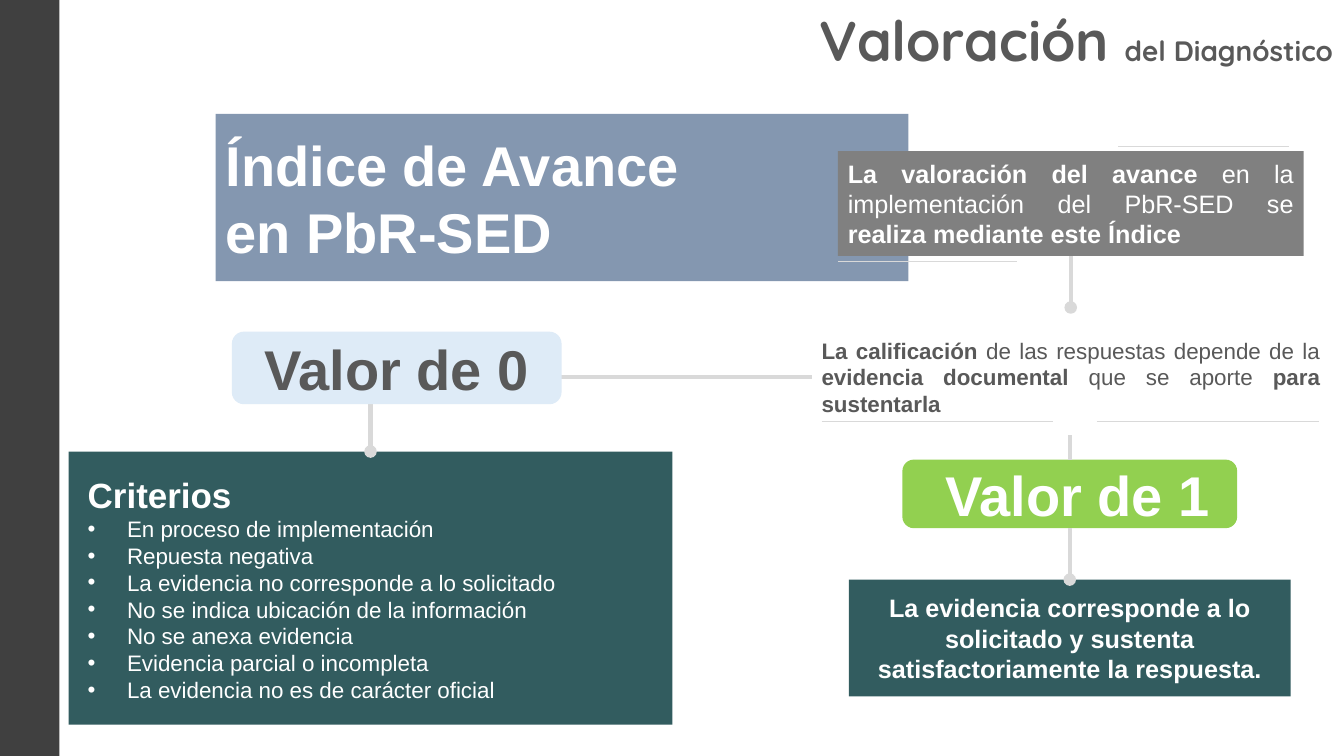
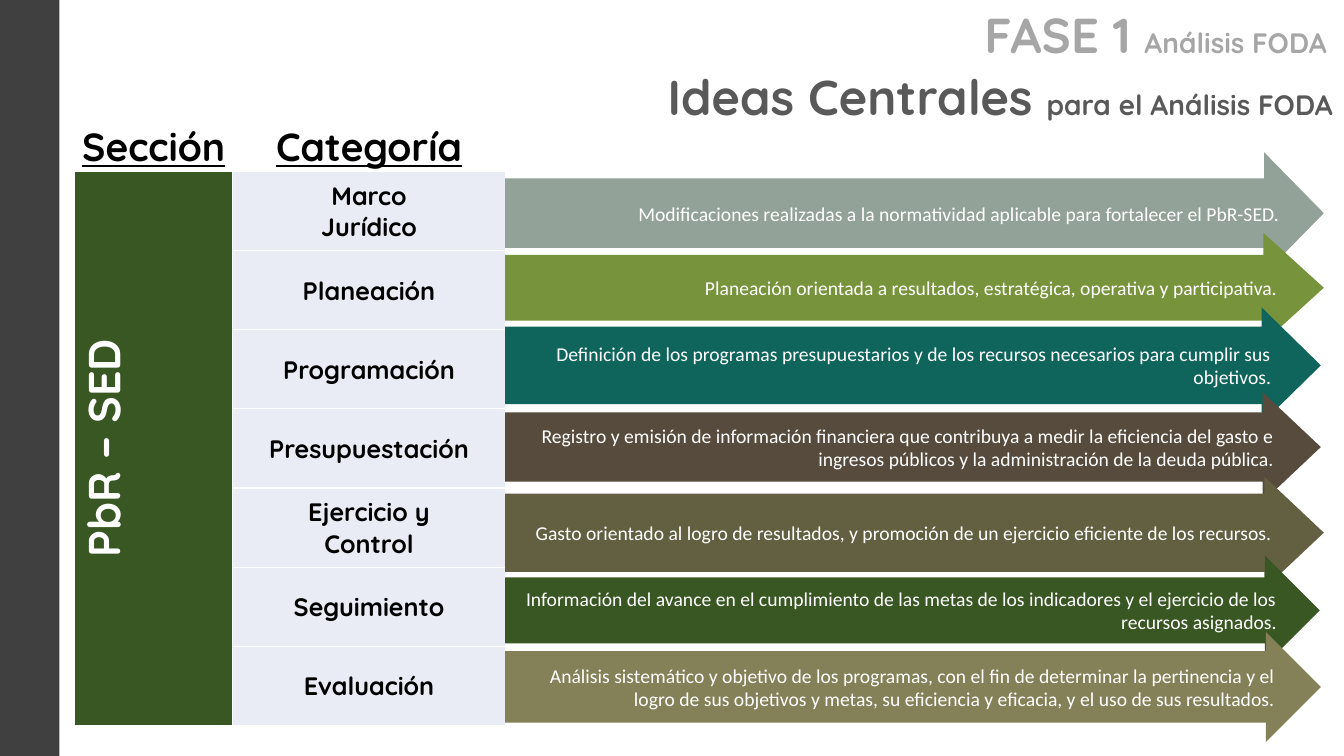
from dataclasses import dataclass

import pptx
import pptx.dml.color
import pptx.enum.dml
import pptx.enum.shapes
import pptx.enum.text
import pptx.oxml
import pptx.oxml.ns
import pptx.util

Inches = pptx.util.Inches
Pt = pptx.util.Pt
qn = pptx.oxml.ns.qn
Preset = pptx.enum.shapes.MSO_SHAPE
Wire = pptx.enum.shapes.MSO_CONNECTOR
Align = pptx.enum.text.PP_ALIGN
Anchor = pptx.enum.text.MSO_ANCHOR
TOP, LEFT, BOTTOM = 0, 1, 2


@dataclass(frozen=True)
class Theme:
    white: str = "FFFFFF"
    black: str = "000000"
    bar: str = "404040"
    ink: str = "595959"
    muted: str = "A6A6A6"
    rule: str = "D9D9D9"
    banner: str = "8497B0"
    gray: str = "808080"
    teal: str = "325C5F"
    pale_blue: str = "DEEBF7"
    lime: str = "92D050"
    section: str = "385723"
    category: str = "E9EBF5"
    title_font: str = "Quicksand"
    body_font: str = "Arial"
    arrow_font: str = "Calibri"
    huge: int = 40
    vertical: int = 32
    title: int = 35
    header: int = 28
    heading: int = 25
    subtitle: int = 20
    body: int = 18
    small: int = 16
    arrow: int = 14


THEME = Theme()

# Paragraphs are strings, or lists of (text, bold) runs.
BOXES = {
    "banner": dict(at=(2.14, 1.13, 6.87, 1.66), fill=THEME.banner, size=THEME.huge, bold=True,
                   align=Align.LEFT, text=["Índice de Avance", "en PbR-SED"]),
    "valuation": dict(at=(8.31, 1.5, 4.62, 1.04), fill=THEME.gray, align=Align.JUSTIFY, text=[[
        ("La valoración del avance ", True),
        ("en la implementación del PbR-SED se ", False),
        ("realiza mediante este Índice", True)]]),
    "grading": dict(at=(8.05, 3.05, 5.14, 1.38), fill=THEME.white, color=THEME.ink,
                    size=THEME.small, align=Align.JUSTIFY, text=[[
                        ("La calificación ", True),
                        ("de las respuestas depende de la ", False),
                        ("evidencia documental ", True),
                        ("que se aporte ", False),
                        ("para sustentarla", True)]]),
    "evidence": dict(at=(8.42, 5.75, 4.38, 1.16), fill=THEME.teal, bold=True, text=[
        "La evidencia corresponde a lo solicitado y sustenta satisfactoriamente la respuesta."]),
    "value_one": dict(at=(8.95, 4.56, 3.32, 0.68), fill=THEME.lime, size=THEME.huge, bold=True,
                      preset=Preset.ROUNDED_RECTANGLE, text=["Valor de 1"]),
}
VALUE_ZERO = dict(at=(2.3, 3.29, 3.27, 0.72), fill=THEME.pale_blue, color=THEME.ink,
                  size=THEME.huge, bold=True, preset=Preset.ROUNDED_RECTANGLE,
                  text=["Valor de 0"])
CRITERIA_AT = (0.68, 4.48, 5.99, 2.71)
CRITERIA = [
    "En proceso de implementación",
    "Repuesta negativa",
    "La evidencia no corresponde a lo solicitado",
    "No se indica ubicación de la información",
    "No se anexa evidencia",
    "Evidencia parcial o incompleta",
    "La evidencia no es de carácter oficial",
]
THIN_RULES = [(11.09, 12.78, 1.45), (8.31, 10.09, 2.59), (8.15, 10.44, 4.18), (10.88, 13.08, 4.18)]

HEADERS = ["Sección", "Categoría"]
SECTION = "PbR – SED"
TABLE_AT = (0.74, 1.07, 4.27, 6.13)
COLUMNS = (1.57, 2.7)
HEADER_HEIGHT = 0.63
CATEGORIES = [["Marco", "Jurídico"], ["Planeación"], ["Programación"], ["Presupuestación"],
              ["Ejercicio y", "Control"], ["Seguimiento"], ["Evaluación"]]
ARROW_LEFT = 5.01
# top, width, height, shaft and head proportions, colour, text
ARROWS = [
    (1.51, 8.12, 1.21, 0.57, 0.49, "93A299",
     "Modificaciones realizadas a la normatividad aplicable para fortalecer el PbR-SED."),
    (2.31, 8.12, 1.09, 0.6, 0.55, "77933C",
     "Planeación orientada a resultados, estratégica, operativa y participativa."),
    (3.05, 8.09, 1.15, 0.67, 0.51, "0F645C",
     "Definición de los programas presupuestarios y de los recursos necesarios para cumplir sus "
     "objetivos."),
    (3.89, 8.09, 1.09, 0.63, 0.53, "564B3C",
     "Registro y emisión de información financiera que contribuya a medir la eficiencia del gasto e "
     "ingresos públicos y la administración de la deuda pública."),
    (4.73, 8.12, 1.11, 0.7, 0.53, "636042",
     "Gasto orientado al logro de resultados, y promoción de un ejercicio eficiente de los recursos."),
    (5.51, 8.08, 1.09, 0.6, 0.5, "385723",
     "Información del avance en el cumplimiento de las metas de los indicadores y el ejercicio de los "
     "recursos asignados."),
    (6.27, 8.09, 1.09, 0.65, 0.5, "848058",
     "Análisis sistemático y objetivo de los programas, con el fin de determinar la pertinencia y el "
     "logro de sus objetivos y metas, su eficiencia y eficacia, y el uso de sus resultados."),
]


def rgb(value):
    return pptx.dml.color.RGBColor.from_string(value)


def inches(values):
    return [Inches(value) for value in values]


def set_font(font, size, color, name, bold):
    font.size, font.name, font.bold = Pt(size), name, bold
    font.color.rgb = rgb(color)


def write(frame, paragraphs, size=THEME.body, color=THEME.white, name=THEME.body_font,
          bold=False, align=Align.CENTER):
    for index, content in enumerate(paragraphs):
        para = frame.add_paragraph() if index else frame.paragraphs[0]
        para.alignment = align
        set_font(para.font, size, color, name, bold)
        if isinstance(content, str):
            para.add_run().text = content
            continue
        for text, run_bold in content:
            span = para.add_run()
            span.text, span.font.bold = text, run_bold


def add_box(page, at, fill, text=(), preset=Preset.RECTANGLE, **style):
    box = page.shapes.add_shape(preset, *inches(at))
    box.shadow.inherit = False
    box.fill.solid()
    box.fill.fore_color.rgb = rgb(fill)
    box.line.fill.background()
    box.text_frame.word_wrap = True
    box.text_frame.vertical_anchor = Anchor.MIDDLE
    write(box.text_frame, text, **style)
    return box


def add_title(page, at, main, detail, size, color=THEME.ink):
    box = page.shapes.add_textbox(*inches(at))
    frame = box.text_frame
    frame.word_wrap = True
    frame.auto_size = pptx.enum.text.MSO_AUTO_SIZE.SHAPE_TO_FIT_TEXT
    para = frame.paragraphs[0]
    para.alignment = Align.RIGHT
    set_font(para.font, size, color, THEME.title_font, True)
    para.add_run().text = main + " "
    span = para.add_run()
    span.text, span.font.size = detail, Pt(THEME.subtitle)


def add_line(page, start, end, width, dot=False, kind=Wire.STRAIGHT):
    """Draw a line; an end is an (x, y) point or a (shape, side) pair."""
    points = [(0, 0) if hasattr(spot[0], "shape_id") else inches(spot) for spot in (start, end)]
    line = page.shapes.add_connector(kind, *points[0], *points[1])
    for spot, join in ((start, line.begin_connect), (end, line.end_connect)):
        if hasattr(spot[0], "shape_id"):
            join(*spot)
    line.line.color.rgb = rgb(THEME.rule)
    line.line.width = Pt(width)
    properties = line.element.spPr
    if dot:
        outline = properties.find(qn("a:ln"))
        pptx.oxml.ns  # namespace helpers stay on the public module
        outline.append(outline.makeelement(qn("a:tailEnd"), {"type": "oval"}))
    properties.append(properties.makeelement(qn("a:effectLst"), {}))
    return line


def add_criteria(page):
    box = add_box(page, CRITERIA_AT, THEME.teal)
    frame = box.text_frame
    frame.margin_left = frame.margin_right = frame.margin_top = frame.margin_bottom = 0
    for index, text in enumerate(["Criterios"] + CRITERIA):
        para = frame.add_paragraph() if index else frame.paragraphs[0]
        para.alignment = Align.JUSTIFY if index else Align.LEFT
        layout = para._p.get_or_add_pPr()
        layout.set("marL", str(Inches(0.58 if index else 0.19)))
        layout.set("indent", str(Inches(-0.39 if index else 0)))
        if index:
            layout.append(layout.makeelement(qn("a:buFont"), {"typeface": THEME.body_font}))
            layout.append(layout.makeelement(qn("a:buChar"), {"char": "•"}))
        set_font(para.font, THEME.small if index else THEME.heading, THEME.white,
                 THEME.body_font, not index)
        para.add_run().text = text
    return box


def style_cell(cell, text, size, color, fill=None, anchor=Anchor.MIDDLE):
    cell.margin_left = cell.margin_right = cell.margin_top = Inches(0.01)
    cell.margin_bottom = 0
    cell.vertical_anchor = anchor
    if fill:
        cell.fill.solid()
        cell.fill.fore_color.rgb = rgb(fill)
    else:
        cell.fill.background()
    write(cell.text_frame, text, size, color, THEME.title_font, True)
    properties = cell._tc.get_or_add_tcPr()
    for index, side in enumerate(("a:lnL", "a:lnR", "a:lnT", "a:lnB")):
        border = properties.makeelement(qn(side), {"w": str(Pt(1))})
        paint = border.makeelement(qn("a:solidFill"), {})
        paint.append(paint.makeelement(qn("a:srgbClr"), {"val": THEME.white}))
        border.append(paint)
        properties.insert(index, border)


def add_category_table(page):
    rows = len(CATEGORIES) + 1
    table = page.shapes.add_table(rows, len(COLUMNS), *inches(TABLE_AT)).table
    table.first_row = table.horz_banding = False
    for column, width in zip(table.columns, COLUMNS):
        column.width = Inches(width)
    for index, row in enumerate(table.rows):
        row.height = Inches((TABLE_AT[3] - HEADER_HEIGHT) / len(CATEGORIES) if index
                            else HEADER_HEIGHT)
    for column, header in enumerate(HEADERS):
        cell = table.cell(0, column)
        style_cell(cell, [header], THEME.header, THEME.black, anchor=Anchor.BOTTOM)
        cell.text_frame.paragraphs[0].font.underline = True
    section = table.cell(1, 0)
    section.merge(table.cell(rows - 1, 0))
    style_cell(section, [SECTION], THEME.vertical, THEME.white, THEME.section)
    section._tc.get_or_add_tcPr().set("vert", "vert270")
    for row, lines in enumerate(CATEGORIES, start=1):
        style_cell(table.cell(row, 1), lines, THEME.body, THEME.black, THEME.category)


def build_valuation(page):
    add_title(page, (2.54, 0.01, 10.78, 0.77), "Valoración", "del Diagnóstico", THEME.huge)
    box = {name: add_box(page, **content) for name, content in BOXES.items()}
    box["value_one"].text_frame.margin_left = Inches(0.25)
    criteria = add_criteria(page)
    for left, right, top in THIN_RULES:
        add_line(page, (left, top), (right, top), 0.5)
    add_line(page, (box["valuation"], BOTTOM), (box["grading"], TOP), 3, dot=True)
    add_line(page, (10.61, 4.32), (box["value_one"], TOP), 3)
    add_line(page, (box["value_one"], BOTTOM), (box["evidence"], TOP), 3, dot=True)
    elbow = add_line(page, (box["grading"], LEFT), (criteria, TOP), 3, dot=True, kind=Wire.ELBOW)
    elbow.element.spPr.find(qn("a:prstGeom")).set("prst", "bentConnector2")
    add_box(page, **VALUE_ZERO)


def build_central_ideas(page):
    add_title(page, (3.85, 0.61, 9.47, 0.69), "Ideas Centrales", "para el Análisis FODA", THEME.title)
    add_title(page, (3.79, 0, 9.47, 0.71), "FASE 1", "Análisis FODA", THEME.title, THEME.muted)
    add_category_table(page)
    for top, width, height, shaft, head, fill, text in ARROWS:
        arrow = add_box(page, (ARROW_LEFT, top, width, height), fill, [text], Preset.RIGHT_ARROW,
                        size=THEME.arrow, name=THEME.arrow_font, align=Align.RIGHT)
        arrow.adjustments[0], arrow.adjustments[1] = shaft, head


def main():
    deck = pptx.Presentation()
    deck.slide_width, deck.slide_height = inches((13.33, 7.5))
    blank = deck.slide_layouts[6]
    pages = [deck.slides.add_slide(blank) for _ in range(2)]
    side_bar = add_box(pages[0], (0, 0, 0.59, 7.5), THEME.bar)
    blank.shapes.element.append(side_bar.element)  # shared by every slide
    build_valuation(pages[0])
    build_central_ideas(pages[1])
    deck.save("out.pptx")


if __name__ == "__main__":
    main()
